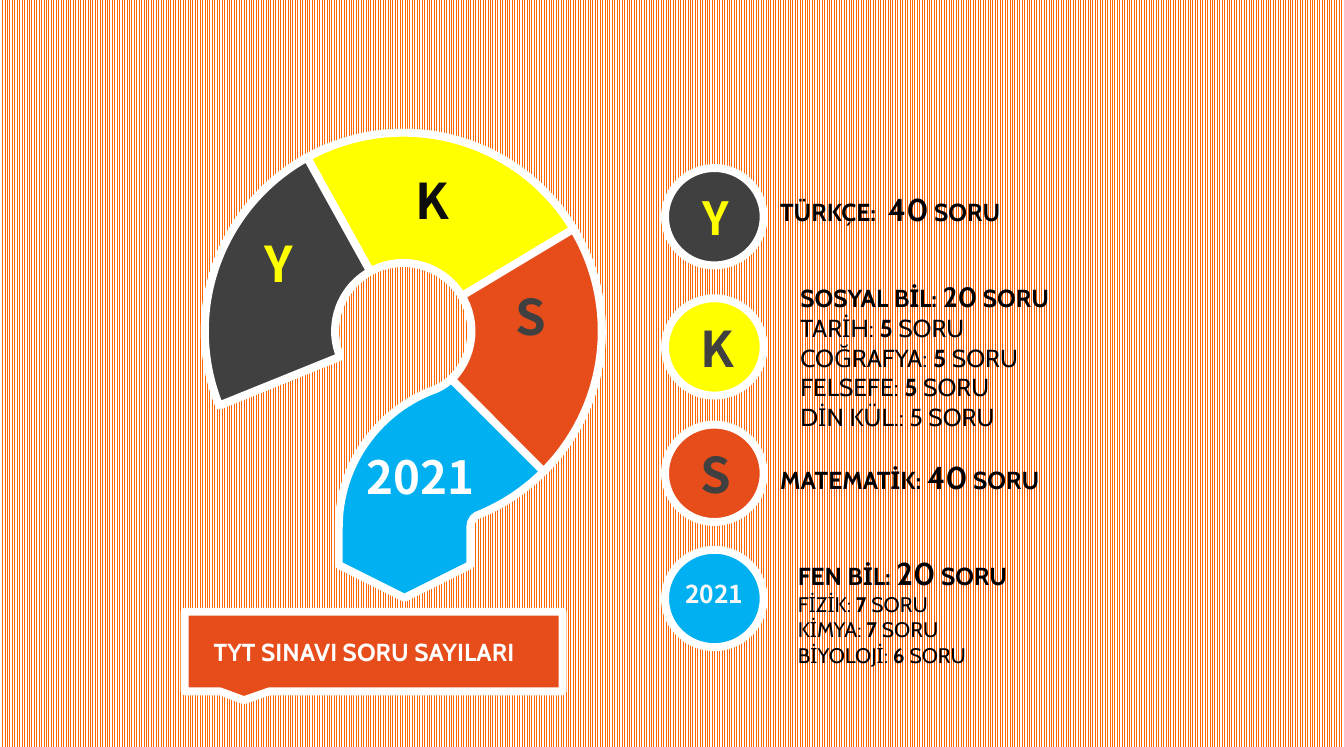
from math import ceil, cos, floor, radians, sin, tan

from lxml.etree import SubElement
from pptx import Presentation
from pptx.dml.color import RGBColor
from pptx.enum.dml import MSO_PATTERN
from pptx.enum.shapes import MSO_SHAPE
from pptx.enum.text import MSO_ANCHOR, MSO_AUTO_SIZE, PP_ALIGN
from pptx.oxml.ns import qn
from pptx.util import Inches, Pt

ORANGE = RGBColor(0xFF, 0x66, 0x00)
WHITE = RGBColor(0xFF, 0xFF, 0xFF)
PALE = RGBColor(0xF8, 0xF8, 0xF8)
BLACK = RGBColor(0x00, 0x00, 0x00)
INK = RGBColor(0x0D, 0x0D, 0x0D)
GREY = RGBColor(0x40, 0x40, 0x40)
YELLOW = RGBColor(0xFF, 0xFF, 0x00)
RED = RGBColor(0xE6, 0x4D, 0x1B)
BLUE = RGBColor(0x00, 0xB0, 0xF0)

SANS = "Cabin"
BOLD = "Noto Sans CJK SC"

# Ring of the question mark, and the bend that leads into its stem
RING = (3.19, 2.62)
OUTER, INNER = 1.57, 0.54
BEND = (3.84, 4.17)
WIDE, TIGHT = 1.16, 0.12


def arc(center, radius, start, end):
    """Start point, then one curve (two handles, end) per quadrant.

    Degrees run clockwise from the right.
    """
    low, high = min(start, end), max(start, end)
    turns = range(floor(low / 90) + 1, ceil(high / 90))
    stops = [low] + [90 * t for t in turns] + [high]
    if start > end:
        stops.reverse()

    def spot(angle, pull=0):
        a = radians(angle)
        return (center[0] + radius * (cos(a) - pull * sin(a)),
                center[1] + radius * (sin(a) + pull * cos(a)))

    steps = [[spot(start)]]
    for a, b in zip(stops, stops[1:]):
        pull = 4 / 3 * tan(radians(b - a) / 4)
        steps.append([spot(a, pull), spot(b, -pull), spot(b)])
    return steps


def paint(shape, color):
    shape.shadow.inherit = False
    shape.fill.solid()
    shape.fill.fore_color.rgb = color
    shape.line.color.rgb = WHITE
    shape.line.width = Pt(4.5)


def add_form(slide, steps, color):
    ends = [(Inches(s[-1][0]), Inches(s[-1][1])) for s in steps]
    form = slide.shapes.build_freeform(*ends[0])
    form.add_line_segments(ends[1:], close=True)
    shape = form.convert_to_shape()
    # Bend the straight steps that have handles
    lines = list(shape.element.iter(qn("a:lnTo")))
    for line, step in zip(lines, steps[1:]):
        if len(step) == 3:
            line.tag = qn("a:cubicBezTo")
            for i, (x, y) in enumerate(step[:2]):
                dot = SubElement(line, qn("a:pt"))
                dot.set("x", str(Inches(x) - shape.left))
                dot.set("y", str(Inches(y) - shape.top))
                line.insert(i, dot)
    paint(shape, color)


def add_wedge(slide, start, end, color):
    rim = arc(RING, OUTER, start, end)
    add_form(slide, rim + arc(RING, INNER, end, start), color)


def add_letter(slide, text, left, top, width, height, size, color):
    box = slide.shapes.add_textbox(Inches(left), Inches(top),
                                   Inches(width), Inches(height))
    frame = box.text_frame
    frame.word_wrap = False
    frame.text = text
    font = frame.paragraphs[0].runs[0].font
    font.name, font.size, font.bold = BOLD, Pt(size), True
    font.color.rgb = color


def add_badge(slide, top, color):
    disc = slide.shapes.add_shape(MSO_SHAPE.OVAL, Inches(5.26), Inches(top),
                                  Inches(0.78), Inches(0.77))
    paint(disc, color)


def set_lines(shape, left, top, width, height, lines,
              color=BLACK, align=PP_ALIGN.LEFT):
    """Place a text shape; each line is a list of (text, size, bold)."""
    shape.left, shape.top = Inches(left), Inches(top)
    shape.width, shape.height = Inches(width), Inches(height)
    frame = shape.text_frame
    frame.word_wrap = True
    frame.auto_size = MSO_AUTO_SIZE.NONE
    frame.vertical_anchor = MSO_ANCHOR.TOP
    frame.margin_left = frame.margin_right = Inches(0.07)
    frame.margin_top = frame.margin_bottom = Inches(0.04)
    for i, line in enumerate(lines):
        para = frame.add_paragraph() if i else frame.paragraphs[0]
        props = para._p.get_or_add_pPr()
        props.set("marL", "0")
        props.set("indent", "0")
        SubElement(props, qn("a:buNone"))
        para.alignment = align
        para.space_before = para.space_after = Pt(0)
        para.line_spacing = 1.0
        for text, size, bold in line:
            run = para.add_run()
            run.text = text
            font = run.font
            font.name, font.size, font.bold = SANS, Pt(size), bold
            font.color.rgb = color


def head(name, count, size):
    return [(name + ": ", 14, True), (count, size, True),
            (" SORU", 14, True)]


def item(name, count, size, bold=True):
    return [(name + ": ", size, False), (count, size, bold),
            (" SORU", size, False)]


def add_mark(slide):
    # Banner with a small pointer below
    banner = [(1.46, 4.84), (4.45, 4.84), (4.45, 5.47), (2.13, 5.47),
              (1.93, 5.54), (1.74, 5.47), (1.46, 5.47)]
    add_form(slide, [[p] for p in banner], RED)
    # Hook and stem
    hook = arc(RING, OUTER, 158, 427) + arc(BEND, TIGHT, 248, 180)[1:]
    stem = [[(3.72, 4.47)], [(3.2, 4.73)], [(2.68, 4.47)]]
    back = arc(BEND, WIDE, 180, 248) + arc(RING, INNER, 427, 158)[1:]
    add_form(slide, hook + stem + back, BLUE)
    # Coloured parts of the ring
    for start, end, color in [(241, 331, YELLOW), (329, 405, RED),
                              (158, 241, GREY)]:
        add_wedge(slide, start, end, color)
    for letter in [("Y", 1.99, 1.8, 0.46, 0.57, 28, YELLOW),
                   ("K", 3.19, 1.3, 0.47, 0.57, 28, INK),
                   ("S", 3.98, 2.22, 0.44, 0.57, 28, GREY),
                   ("2021", 2.8, 3.5, 1.1, 0.54, 26, WHITE)]:
        add_letter(slide, *letter)


def add_key(slide):
    for top, color, letter in [
            (1.33, GREY, ("Y", 5.46, 1.45, 0.44, 0.54, 26, YELLOW)),
            (2.36, YELLOW, ("K", 5.44, 2.47, 0.47, 0.57, 28, GREY)),
            (3.36, RED, ("S", 5.44, 3.47, 0.44, 0.57, 28, GREY)),
            (4.35, BLUE, ("2021", 5.32, 4.53, 0.69, 0.34, 14, PALE))]:
        add_badge(slide, top, color)
        add_letter(slide, *letter)


def main():
    deck = Presentation()
    deck.slide_width, deck.slide_height = Inches(10.63), Inches(5.91)
    slide = deck.slides.add_slide(deck.slide_layouts[3])
    title, social, science = slide.placeholders

    # Striped background
    fill = slide.background.fill
    fill.patterned()
    fill.pattern = MSO_PATTERN.LIGHT_VERTICAL
    fill.fore_color.rgb = ORANGE
    fill.back_color.rgb = WHITE

    add_mark(slide)
    add_key(slide)

    # Title, brought in front of the banner
    slide.shapes._spTree.append(title.element)
    set_lines(title, 1.54, 5, 2.68, 0.31,
              [[("TYT SINAVI SORU SAYILARI", 14, True)]],
              WHITE, PP_ALIGN.CENTER)

    # Single subjects; the first has a wider gap before its count
    turkish = [("TÜRKÇE:", 14, True), (" ", 14, True), ("40", 18, True),
               (" SORU", 14, True)]
    maths = head("MATEMATİK", "40", 18)
    for top, line in [(1.46, turkish), (3.58, maths)]:
        box = slide.shapes.add_textbox(0, 0, 0, 0)
        set_lines(box, 6.1, top, 3.28, 0.38, [line])
        if line is turkish:
            gap = box.text_frame.paragraphs[0].runs[1]
            gap.font._element.set("spc", "350")

    # Subject groups
    set_lines(social, 6.26, 2.17, 3.28, 1.29, [
        head("SOSYAL BİL", "20", 16), item("TARİH", "5", 14),
        item("COĞRAFYA", "5", 14), item("FELSEFE", "5", 14),
        item("DİN KÜL.", "5", 14, False)])
    set_lines(science, 6.24, 4.34, 3.28, 0.98, [
        head("FEN BİL", "20", 18), item("FİZİK", "7", 12),
        item("KİMYA", "7", 12), item("BİYOLOJİ", "6", 12)])

    deck.save("out.pptx")


if __name__ == "__main__":
    main()
